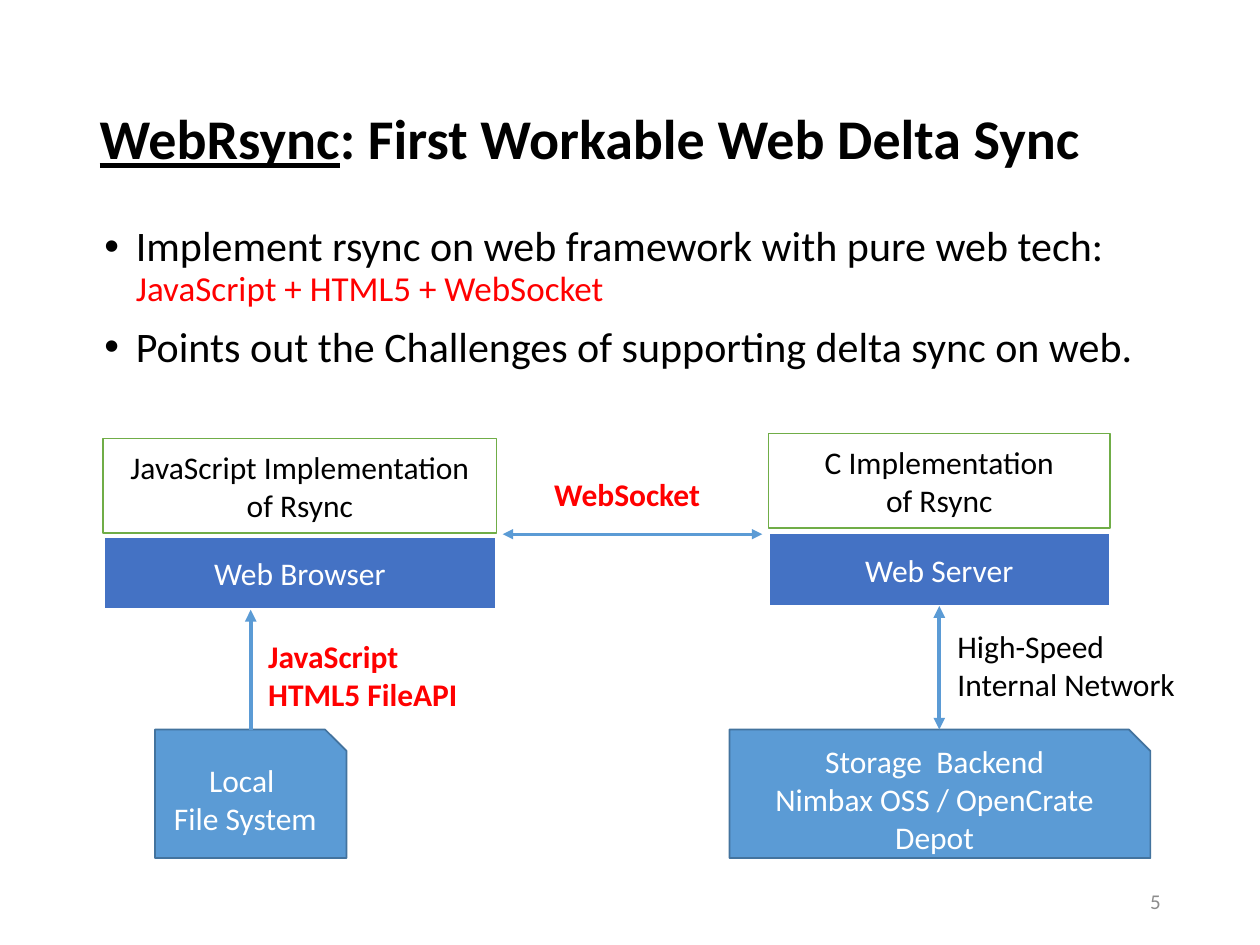
from dataclasses import dataclass
from typing import Optional

from lxml import etree
from pptx import Presentation
from pptx import util as u
from pptx.dml.color import RGBColor
from pptx.enum import shapes, text
from pptx.oxml.ns import qn

BLACK = RGBColor(0x00, 0x00, 0x00)
WHITE = RGBColor(0xFF, 0xFF, 0xFF)
RED = RGBColor(0xFF, 0x00, 0x00)
GREEN = RGBColor(0x70, 0xAD, 0x47)
BLUE = RGBColor(0x44, 0x72, 0xC4)
SKY = RGBColor(0x5B, 0x9B, 0xD5)
STEEL = RGBColor(0x43, 0x73, 0x9E)
GREY = RGBColor(0x8C, 0x8C, 0x8C)
FONT = "Calibri"

RECT = shapes.MSO_SHAPE.RECTANGLE
SNIP = shapes.MSO_SHAPE.SNIP_1_RECTANGLE
LEFT, CENTER, RIGHT = text.PP_ALIGN.LEFT, text.PP_ALIGN.CENTER, text.PP_ALIGN.RIGHT

# Grid of 100 columns by 75 rows
deck = Presentation()
deck.slide_width, deck.slide_height = u.Inches(10), u.Inches(7.5)
COLUMN, ROW = deck.slide_width / 100, deck.slide_height / 75


@dataclass(frozen=True)
class Area:
    column: float
    row: float
    columns: float
    rows: float

    def emu(self) -> tuple[int, int, int, int]:
        return (round(self.column * COLUMN), round(self.row * ROW),
                round(self.columns * COLUMN), round(self.rows * ROW))


@dataclass(frozen=True)
class Style:
    kind: shapes.MSO_SHAPE
    fill: RGBColor
    line: RGBColor
    width: float
    color: RGBColor


@dataclass(frozen=True)
class Block:
    words: str
    area: Area
    style: Style


@dataclass(frozen=True)
class Label:
    words: str
    area: Area
    color: RGBColor
    bold: bool = False
    wrap: bool = True


@dataclass(frozen=True)
class Arrow:
    start: tuple[float, float]
    end: tuple[float, float]
    width: float
    both: bool = True
    source: Optional[str] = None


def format_span(span, size: float, color: RGBColor, bold: bool = False) -> None:
    span.font.name, span.font.size = FONT, u.Pt(size)
    span.font.color.rgb, span.font.bold = color, bold


def write(frame, words: str, color: RGBColor, align, bold: bool = False) -> None:
    frame.text = words
    for para in frame.paragraphs:
        para.alignment = align
        for span in para.runs:
            format_span(span, 18, color, bold)


def draw_block(page, block: Block):
    style = block.style
    box = page.shapes.add_shape(style.kind, *block.area.emu())
    box.shadow.inherit = False
    box.fill.solid()
    box.fill.fore_color.rgb = style.fill
    box.line.color.rgb, box.line.width = style.line, u.Pt(style.width)
    box.text_frame.word_wrap = True
    box.text_frame.vertical_anchor = text.MSO_ANCHOR.MIDDLE
    write(box.text_frame, block.words, style.color, CENTER)
    return box


def draw_label(page, label: Label) -> None:
    frame = page.shapes.add_textbox(*label.area.emu()).text_frame
    frame.word_wrap = label.wrap
    frame.auto_size = text.MSO_AUTO_SIZE.SHAPE_TO_FIT_TEXT
    write(frame, label.words, label.color, LEFT, label.bold)


def draw_arrow(page, arrow: Arrow, boxes: dict) -> None:
    (x1, y1), (x2, y2) = arrow.start, arrow.end
    line = page.shapes.add_connector(
        shapes.MSO_CONNECTOR.STRAIGHT, round(x1 * COLUMN), round(y1 * ROW),
        round(x2 * COLUMN), round(y2 * ROW))
    if arrow.source:
        line.begin_connect(boxes[arrow.source], 2)
    line.line.color.rgb, line.line.width = SKY, u.Pt(arrow.width)
    outline = line.line._get_or_add_ln()
    for end in ("a:headEnd", "a:tailEnd") if arrow.both else ("a:tailEnd",):
        etree.SubElement(outline, qn(end), type="triangle")
    etree.SubElement(line._element.spPr, qn("a:effectLst"))


def draw_title(page) -> None:
    title = page.shapes.title
    title.left, title.top, title.width, title.height = Area(6.9, 4, 86.2, 14.5).emu()
    title.text_frame.vertical_anchor = text.MSO_ANCHOR.MIDDLE
    para = title.text_frame.paragraphs[0]
    para.alignment, para.line_spacing = LEFT, 0.9
    for words, underline in (("WebRsync", True), (": First Workable Web Delta Sync", False)):
        span = para.add_run()
        span.text = words
        format_span(span, 32, BLACK, True)
        span.font.underline = underline


def draw_bullets(page, bullets) -> None:
    frame = page.shapes.add_textbox(*Area(7.3, 17.4, 86.2, 14).emu()).text_frame
    frame.word_wrap = True
    for index, spans in enumerate(bullets):
        para = frame.add_paragraph() if index else frame.paragraphs[0]
        para.line_spacing, para.space_before = 0.9, u.Pt(10 if index else 0)
        for words, size, color in spans:
            span = para.add_run()
            span.text = words
            format_span(span, size, color)
        indent = u.Inches(0.25)
        properties = para._p.get_or_add_pPr()
        properties.set("marL", str(indent))
        properties.set("indent", str(-indent))
        etree.SubElement(properties, qn("a:buFont"), typeface="Arial")
        etree.SubElement(properties, qn("a:buChar"), char="•")


def draw_page_number(page) -> None:
    frame = page.shapes.add_textbox(*Area(70.6, 69.5, 22.5, 4).emu()).text_frame
    frame.word_wrap, frame.vertical_anchor = True, text.MSO_ANCHOR.MIDDLE
    frame.text = "5"
    para = frame.paragraphs[0]
    para.alignment = RIGHT
    format_span(para.runs[0], 12, GREY)


CODE = Style(RECT, WHITE, GREEN, 1, BLACK)
HOST = Style(RECT, BLUE, WHITE, 1.5, WHITE)
STORE = Style(SNIP, SKY, STEEL, 1, WHITE)

BULLETS = (
    (("Implement rsync on web framework with pure web tech: ", 24, BLACK),
     ("JavaScript + HTML5 + WebSocket", 20, RED)),
    (("Points out the Challenges of supporting delta sync on web.", 24, BLACK),),
)
BLOCKS = {
    "client code": Block("JavaScript Implementation of Rsync", Area(8.2, 34.8, 31.2, 7.5), CODE),
    "browser": Block("Web Browser", Area(8.2, 42.6, 31.2, 5.8), HOST),
    "files": Block("Local \nFile System", Area(12.3, 57.9, 15.2, 10.2), STORE),
    "server code": Block("C Implementation\nof Rsync", Area(61, 34.4, 27.1, 7.5), CODE),
    "server": Block("Web Server", Area(61, 42.3, 27.1, 5.8), HOST),
    "backend": Block("Storage  Backend\nNimbax OSS / OpenCrate Depot",
                     Area(57.9, 57.9, 33.4, 10.2), STORE),
}
LABELS = (
    Label("JavaScript\nHTML5 FileAPI", Area(20.3, 50.1, 19.9, 7.1), RED, bold=True),
    Label("WebSocket", Area(43, 37.2, 14.3, 4), RED, bold=True, wrap=False),
    Label("High-Speed\nInternal Network", Area(75, 49.3, 23.5, 7.1), BLACK),
)
ARROWS = (
    Arrow((19.9, 57.9), (19.9, 48.4), 2.25, both=False),
    Arrow((74.55, 48.1), (74.55, 57.9), 2.25, source="server"),
    Arrow((39.9, 42.4), (60.5, 42.4), 1.5),
)


def main() -> None:
    page = deck.slides.add_slide(deck.slide_layouts[5])

    # Heading and key points
    draw_title(page)
    draw_bullets(page, BULLETS)

    # Client and server stacks with their links
    boxes = {name: draw_block(page, block) for name, block in BLOCKS.items()}
    for arrow in ARROWS:
        draw_arrow(page, arrow, boxes)
    for label in LABELS:
        draw_label(page, label)

    draw_page_number(page)
    deck.save("out.pptx")


if __name__ == "__main__":
    main()
